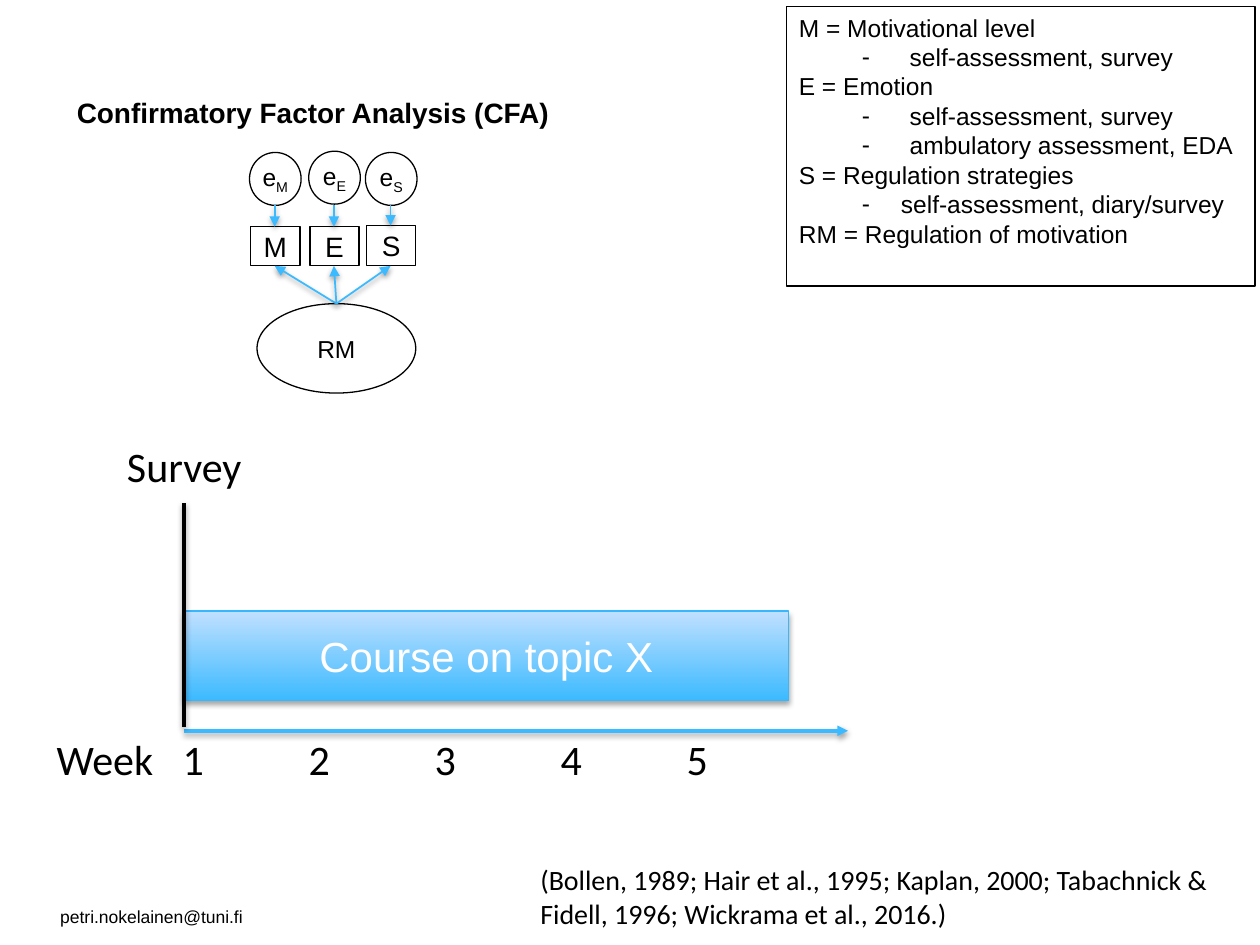
from dataclasses import dataclass

import pptx
import pptx.dml.color
import pptx.enum.shapes
import pptx.enum.text
import pptx.oxml.ns
import pptx.util
from lxml import etree
from pptx.util import Inches

RGBColor = pptx.dml.color.RGBColor
Shapes = pptx.enum.shapes.MSO_SHAPE
Align = pptx.enum.text.PP_ALIGN
Anchor = pptx.enum.text.MSO_ANCHOR
qn = pptx.oxml.ns.qn

BLACK = RGBColor(0x00, 0x00, 0x00)
WHITE = RGBColor(0xFF, 0xFF, 0xFF)
SKY = RGBColor(0x3C, 0xBA, 0xFF)
PALE_SKY = RGBColor(0xC0, 0xE0, 0xFF)
BAR_EDGE = RGBColor(0x36, 0xB7, 0xFE)


@dataclass
class Box:
    left: float
    top: float
    width: float
    height: float

    def inches(self):
        return [Inches(n) for n in (self.left, self.top, self.width, self.height)]


@dataclass
class Indicator:
    letter: str
    center: float
    error_top: float
    top: float


@dataclass
class LegendLine:
    text: str
    margin: float = 0
    hanging: float = 0


INDICATORS = [
    Indicator("M", 2.18, 1.21, 1.8),
    Indicator("E", 2.65, 1.2, 1.8),
    Indicator("S", 3.1, 1.21, 1.79),
]

LEGEND = [
    LegendLine("M = Motivational level"),
    LegendLine("self-assessment, survey", 0.88, 0.38),
    LegendLine("E = Emotion"),
    LegendLine("self-assessment, survey", 0.88, 0.38),
    LegendLine("ambulatory assessment, EDA", 0.88, 0.38),
    LegendLine("S = Regulation strategies"),
    LegendLine("self-assessment, diary/survey", 0.81, 0.31),
    LegendLine("RM = Regulation of motivation"),
]


def write(paragraph, text: str, *, size: float = 14, font: str = "Arial",
          color=BLACK, bold: bool = False, subscript: bool = False):
    run = paragraph.add_run()
    run.text = text
    run.font.size = pptx.util.Pt(size)
    run.font.name = font
    run.font.bold = bold
    run.font.color.rgb = color
    if subscript:
        run.font._element.set("baseline", "-25000")


def place(shape, box: Box):
    shape.left, shape.top, shape.width, shape.height = box.inches()


def outline(shape, color=BLACK, width: float = 0.75):
    shape.line.color.rgb = color
    shape.line.width = pptx.util.Pt(width)


def cast_shadow(effects, opacity: int, distance: float):
    shadow = etree.SubElement(
        effects, qn("a:outerShdw"), blurRad=str(pptx.util.Pt(3.1)),
        dist=str(pptx.util.Pt(distance)), dir="5400000", rotWithShape="0")
    color = etree.SubElement(shadow, qn("a:srgbClr"), val=str(BLACK))
    etree.SubElement(color, qn("a:alpha"), val=str(opacity * 1000))


def add_shape(slide, kind, box: Box, side_inset: float = 0.1):
    shape = slide.shapes.add_shape(kind, *box.inches())
    shape.shadow.inherit = False
    shape.fill.solid()
    shape.fill.fore_color.rgb = WHITE
    outline(shape)
    frame = shape.text_frame
    frame.margin_left = frame.margin_right = Inches(side_inset)
    frame.vertical_anchor = Anchor.MIDDLE
    frame.paragraphs[0].alignment = Align.CENTER
    return shape


def add_line(slide, start: tuple, end: tuple, color=SKY, width: float = 1,
             arrow: bool = True):
    line = slide.shapes.add_connector(
        pptx.enum.shapes.MSO_CONNECTOR.STRAIGHT,
        *[Inches(n) for n in (*start, *end)])
    outline(line, color, width)
    properties = line.element.spPr
    if arrow:
        etree.SubElement(properties.find(qn("a:ln")), qn("a:tailEnd"), type="triangle")
    cast_shadow(etree.SubElement(properties, qn("a:effectLst")), 38, 1.6)


def add_label(slide, box: Box, text: str, wrap: bool = True, **text_format):
    frame = slide.shapes.add_textbox(*box.inches()).text_frame
    frame.word_wrap = wrap
    write(frame.paragraphs[0], text, **text_format)
    return frame.paragraphs[0]


def fill_title(title):
    place(title, Box(0.51, 0.71, 3.97, 0.37))
    frame = title.text_frame
    frame.word_wrap = False
    frame.auto_size = pptx.enum.text.MSO_AUTO_SIZE.NONE
    frame.vertical_anchor = Anchor.TOP
    frame.paragraphs[0].alignment = Align.LEFT
    write(frame.paragraphs[0], "Confirmatory Factor Analysis (CFA)", size=16, bold=True)


def fill_legend(body):
    place(body, Box(6.24, 0.05, 3.72, 2.22))
    outline(body)
    frame = body.text_frame
    frame.auto_size = pptx.enum.text.MSO_AUTO_SIZE.NONE
    for index, item in enumerate(LEGEND):
        paragraph = frame.add_paragraph() if index else frame.paragraphs[0]
        properties = paragraph._p.get_or_add_pPr()
        properties.set("marL", str(Inches(item.margin)))
        properties.set("indent", str(-Inches(item.hanging)))
        if item.hanging:
            paragraph.level = 1
            etree.SubElement(properties, qn("a:buChar"), char="-")
        else:
            etree.SubElement(properties, qn("a:buNone"))
        paragraph.space_before = pptx.util.Pt(0)
        write(paragraph, item.text)


def draw_factor_model(slide):
    factor = add_shape(slide, Shapes.OVAL, Box(2.04, 2.41, 1.26, 0.71))
    write(factor.text_frame.paragraphs[0], "RM")
    for item in INDICATORS:
        error_box = Box(item.center - 0.2, item.error_top, 0.41, 0.42)
        error = add_shape(slide, Shapes.OVAL, error_box, side_inset=0)
        write(error.text_frame.paragraphs[0], "e")
        write(error.text_frame.paragraphs[0], item.letter, subscript=True)
        measure_box = Box(item.center - 0.19, item.top, 0.39, 2.11 - item.top)
        measure = add_shape(slide, Shapes.RECTANGLE, measure_box)
        write(measure.text_frame.paragraphs[0], item.letter, size=16)
    for item in INDICATORS:
        add_line(slide, (item.center, 1.63), (item.center, item.top))
        add_line(slide, (2.67, 2.41), (item.center, 2.11))


def draw_timeline(slide):
    course = add_shape(slide, Shapes.RECTANGLE, Box(1.46, 4.85, 4.8, 0.71))
    course.fill.gradient()
    course.fill.gradient_angle = 90
    for stop, color in zip(course.fill.gradient_stops, (SKY, PALE_SKY)):
        stop.color.rgb = color
    outline(course, BAR_EDGE)
    cast_shadow(course.element.spPr.find(qn("a:effectLst")), 35, 1.8)
    write(course.text_frame.paragraphs[0], "Course on topic X", size=24, color=WHITE)

    add_line(slide, (1.46, 5.8), (6.73, 5.8), width=2)
    weeks = add_label(slide, Box(0.35, 5.77, 5.42, 0.5), "Week\t1\t2\t3\t4\t5",
                      wrap=False, size=24, font="Calibri")
    tabs = etree.SubElement(weeks._p.get_or_add_pPr(), qn("a:tabLst"))
    for week in range(1, 6):
        etree.SubElement(tabs, qn("a:tab"), pos=str(Inches(week)), algn="l")
    add_line(slide, (1.46, 5.77), (1.46, 3.99), color=BLACK, width=2, arrow=False)
    add_label(slide, Box(0.91, 3.45, 1.97, 0.5), "Survey", size=24, font="Calibri")


def main():
    presentation = pptx.Presentation()
    presentation.slide_width, presentation.slide_height = Inches(10), Inches(7.5)
    slide = presentation.slides.add_slide(presentation.slide_layouts[1])
    fill_title(slide.shapes.title)
    fill_legend(slide.placeholders[1])
    draw_factor_model(slide)
    draw_timeline(slide)
    add_label(slide, Box(4.19, 6.8, 5.82, 0.64),
              "(Bollen, 1989; Hair et al., 1995; Kaplan, 2000; Tabachnick & "
              "Fidell, 1996; Wickrama et al., 2016.)", size=16, font="Calibri")
    add_label(slide, Box(0.38, 7.14, 1.66, 0.27), "petri.nokelainen@tuni.fi",
              wrap=False, size=10)
    presentation.save("out.pptx")


if __name__ == "__main__":
    main()
